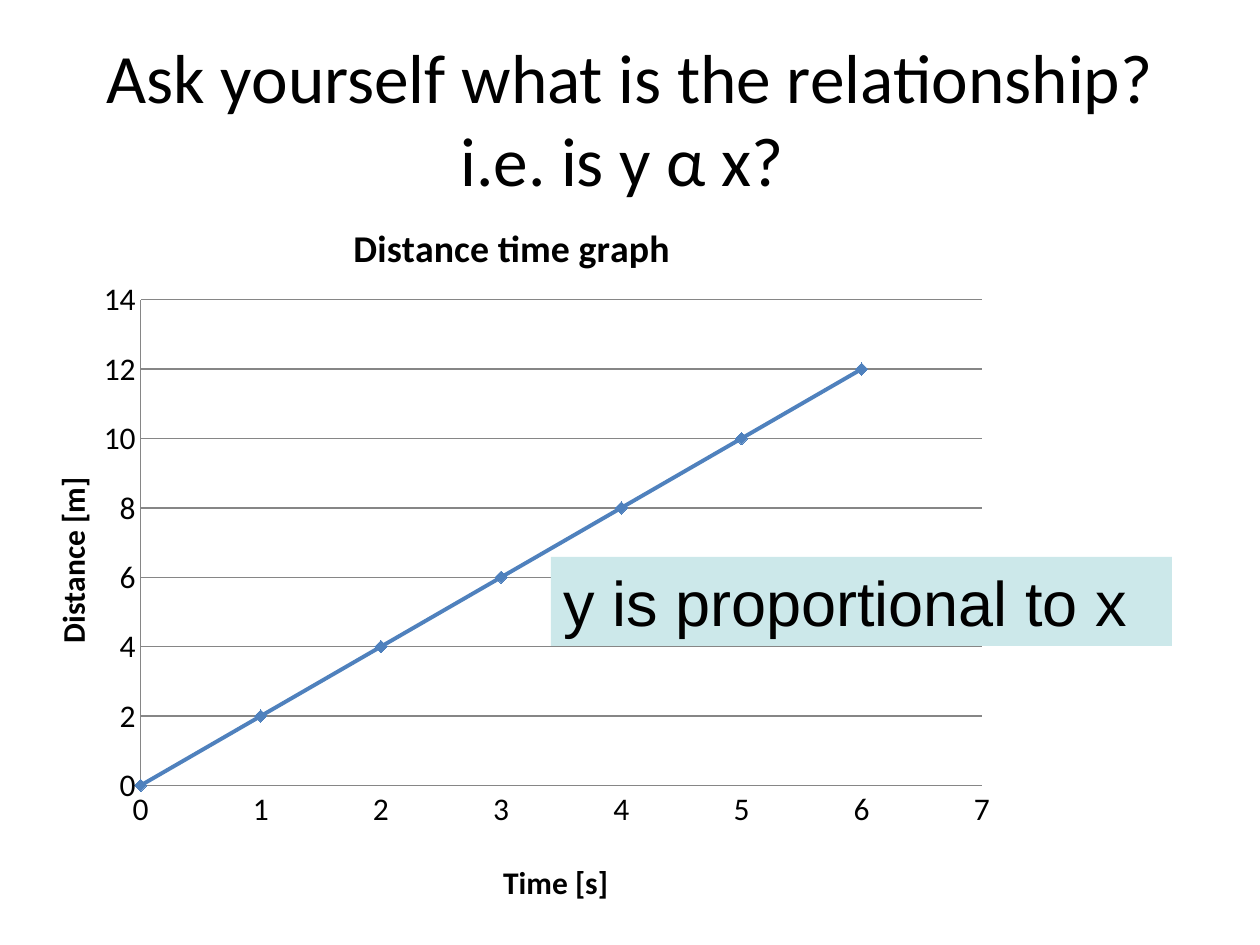
from lxml.etree import SubElement, Element
from pptx import Presentation
from pptx.chart.data import XyChartData
from pptx.dml.color import RGBColor
from pptx.enum.chart import XL_CHART_TYPE as Kind, XL_MARKER_STYLE as Mark
from pptx.enum.chart import XL_TICK_MARK as Tick
from pptx.enum.shapes import MSO_SHAPE as Shape
from pptx.enum.text import MSO_ANCHOR as Anchor, MSO_AUTO_SIZE as Fit, PP_ALIGN as Align
from pptx.oxml.ns import qn
from pptx.util import Emu, Pt

BLACK = RGBColor(0x00, 0x00, 0x00)
BLUE = RGBColor(0x4F, 0x81, 0xBD)
GREY = RGBColor(0x86, 0x86, 0x86)
MINT = RGBColor(0xCC, 0xE8, 0xEA)


def px(num):
    return Emu(round(num * 914400 / 126))


def add_run(para, text, size, font="Calibri", bold=False):
    run = para.add_run()
    run.text = text
    run.font.size = Pt(size)
    run.font.name = font
    run.font.bold = bold
    run.font.color.rgb = BLACK


def add_title(slide, box):
    title = slide.shapes.title
    title.left, title.top, title.width, title.height = map(px, box)
    frame = title.text_frame
    frame.auto_size = Fit.NONE
    frame.vertical_anchor = Anchor.MIDDLE
    para = frame.paragraphs[0]
    para.alignment = Align.CENTER
    add_run(para, "Ask yourself what is the relationship? i.e. is y α x? ", 39.6)


def set_layout(node, after, **parts):
    for old in node.findall(qn("c:layout")):
        node.remove(old)
    layout = Element(qn("c:layout"))
    if after is None:
        node.insert(0, layout)
    else:
        after.addnext(layout)
    manual = SubElement(layout, qn("c:manualLayout"))
    for tag, val in parts.items():
        SubElement(manual, qn("c:" + tag)).set("val", str(val))


def name_part(title, text, size, x, y):
    add_run(title.text_frame.paragraphs[0], text, size, bold=True)
    node = title._element
    set_layout(node, node.find(qn("c:tx")), xMode="edge", yMode="edge", x=x, y=y)


def style_axis(axis, top, step):
    axis.minimum_scale, axis.maximum_scale = 0, top
    axis.major_unit = step
    axis.major_tick_mark = axis.minor_tick_mark = Tick.NONE
    axis.tick_labels.number_format = "General"
    axis.tick_labels.number_format_is_linked = False
    axis.format.line.color.rgb = GREY
    axis.format.line.width = Pt(0.75)


def add_graph(slide, box):
    data = XyChartData()
    points = data.add_series("Series 1")
    for time in range(7):
        points.add_data_point(time, 2 * time)
    chart = slide.shapes.add_chart(Kind.XY_SCATTER_LINES, *map(px, box), data).chart
    chart.font.size = Pt(18)
    chart.font.name = "Calibri"
    chart.font.color.rgb = BLACK
    chart.has_legend = False
    chart.has_title = True
    name_part(chart.chart_title, "Distance time graph ", 21.6, 0.34, 0.04)

    across, up = chart.category_axis, chart.value_axis
    style_axis(across, 7, 1)
    style_axis(up, 14, 2)
    across.has_major_gridlines = False
    up.has_major_gridlines = True
    grid = up.major_gridlines.format.line
    grid.color.rgb = GREY
    grid.width = Pt(0.75)
    name_part(across.axis_title, "Time [s]", 18, 0.49, 0.91)
    name_part(up.axis_title, "Distance [m]", 18, 0.04, 0.39)
    set_layout(chart._chartSpace.chart.plotArea, None, layoutTarget="inner",
               xMode="edge", yMode="edge", x=0.135, y=0.156, w=0.837, h=0.66)

    plot = chart.plots[0]
    plot.vary_by_categories = False
    line = plot.series[0]
    line.smooth = False
    line.format.line.color.rgb = BLUE
    line.format.line.width = Pt(2.25)
    line.marker.style = Mark.DIAMOND
    line.marker.size = 7
    line.marker.format.fill.solid()
    line.marker.format.fill.fore_color.rgb = BLUE
    line.marker.format.line.color.rgb = BLUE


def add_answer(slide, box):
    shape = slide.shapes.add_shape(Shape.RECTANGLE, *map(px, box))
    shape.shadow.inherit = False
    shape.fill.solid()
    shape.fill.fore_color.rgb = MINT
    shape.line.fill.background()
    frame = shape.text_frame
    frame.word_wrap = True
    frame.auto_size = Fit.SHAPE_TO_FIT_TEXT
    frame.vertical_anchor = Anchor.TOP
    para = frame.paragraphs[0]
    para.alignment = Align.LEFT
    add_run(para, "y is proportional to x", 36, "Arial")


def main():
    deck = Presentation()
    deck.slide_width, deck.slide_height = px(1260), px(945)
    slide = deck.slides.add_slide(deck.slide_layouts[5])
    add_title(slide, (63, 38, 1134, 158))
    add_graph(slide, (5, 185, 1005, 736))
    add_answer(slide, (551, 557, 621, 89))
    deck.save("out.pptx")


if __name__ == "__main__":
    main()
